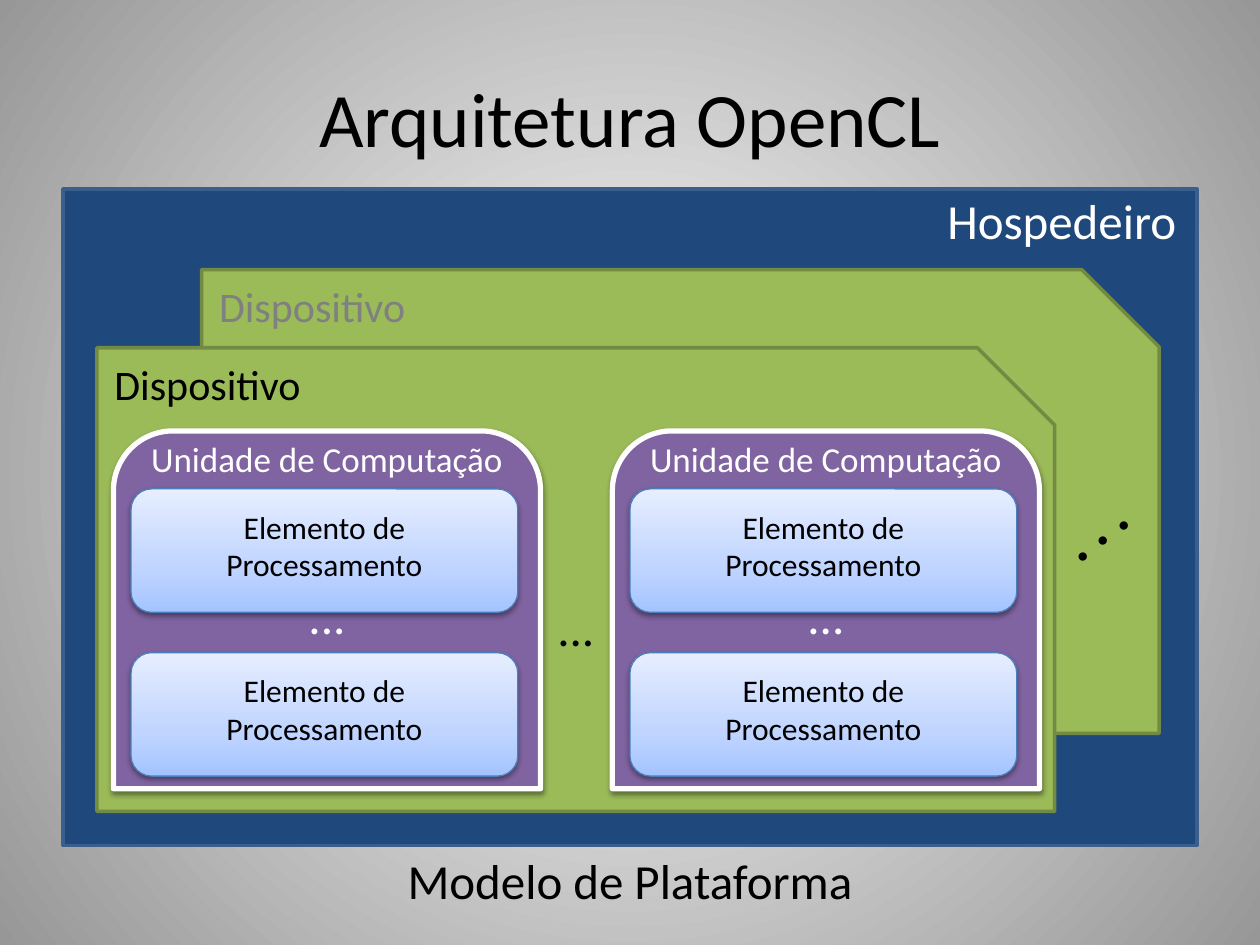
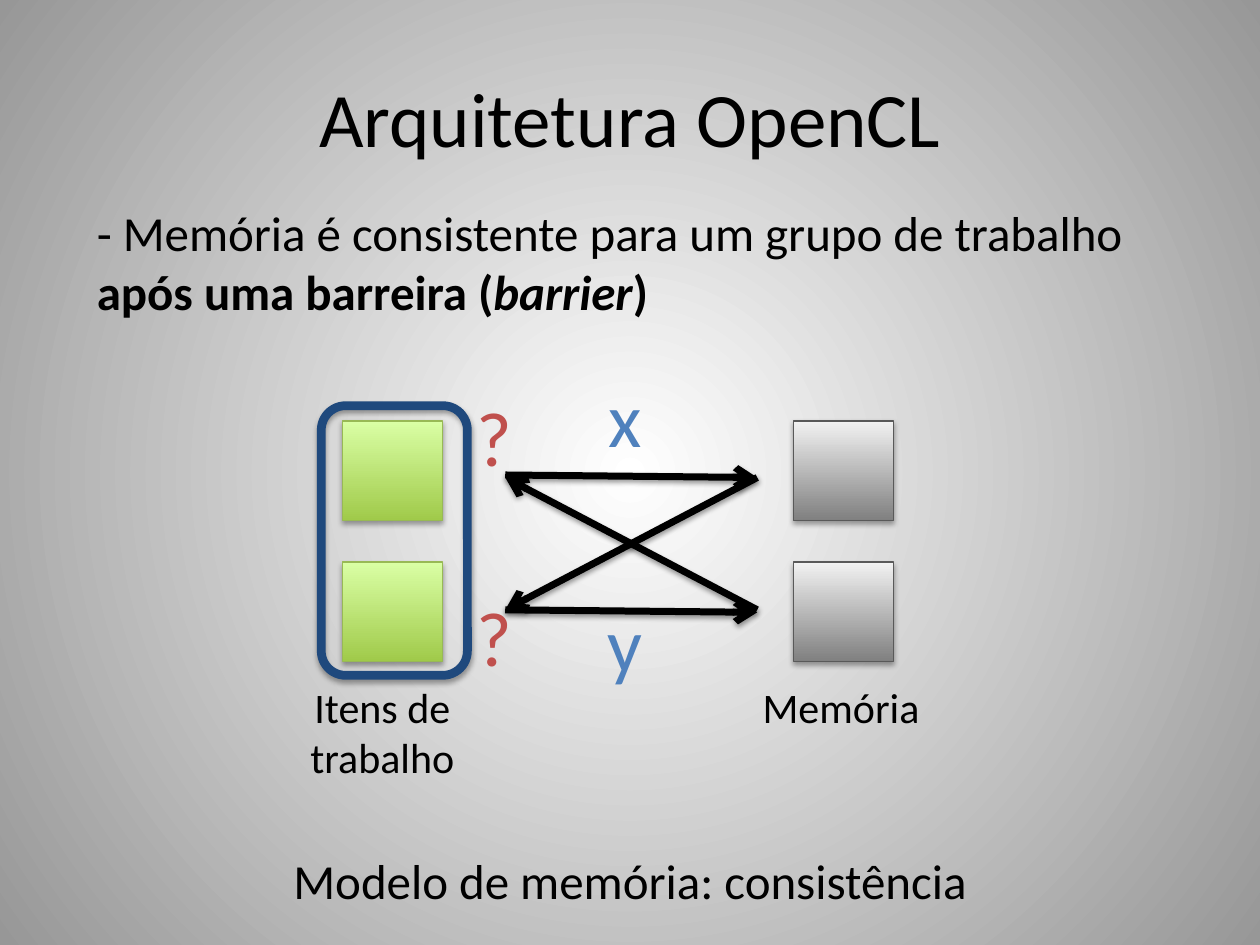
from dataclasses import dataclass
from typing import Optional

from lxml import etree
from pptx import Presentation
from pptx.dml.color import RGBColor
from pptx.enum import shapes, text
from pptx.oxml import ns
from pptx.util import Inches, Pt

FONT = "Calibri"
COLORS = {
    "black": "000000", "white": "FFFFFF", "faded": "808080",
    "navy": "1F497D", "navy_edge": "3A5F8C",
    "green": "9BBB59", "green_edge": "738A42", "purple": "8064A2",
    "element_edge": "4B7EBC", "item_edge": "98B955", "memory_edge": "595959",
    "blue": "4F81BD", "red": "C0504D",
}
GRADIENTS = {
    "background": ((0, "FFFFFF"), (100, "979797")),
    "element": ((0, "A4C4FF"), (35, "BFD4FF"), (100, "E6EEFF")),
    "item": ((0, "A0CA4A"), (100, "DAFFA5")),
    "memory": ((0, "808080"), (100, "F2F2F2")),
}
UPWARD = '<a:lin ang="16200000" scaled="0"/>'
FROM_CENTRE = ('<a:path path="circle"><a:fillToRect l="50000" t="50000" '
               'r="50000" b="50000"/></a:path>')
KIND = shapes.MSO_SHAPE
CENTER, LEFT = text.PP_ALIGN.CENTER, text.PP_ALIGN.LEFT


@dataclass(frozen=True)
class Style:
    """Look of a shape; fill names a colour or a gradient."""
    kind: int
    fill: Optional[str]
    edge: str
    width: float
    shadow: int = 0


HOST = Style(KIND.RECTANGLE, "navy", "navy_edge", 2)
DEVICE = Style(KIND.SNIP_1_RECTANGLE, "green", "green_edge", 2)
UNIT = Style(KIND.ROUND_2_SAME_RECTANGLE, "purple", "white", 3, 38)
ELEMENT = Style(KIND.ROUNDED_RECTANGLE, "element", "element_edge", 0.75, 38)
ITEM = Style(KIND.RECTANGLE, "item", "item_edge", 0.75, 35)
MEMORY = Style(KIND.RECTANGLE, "memory", "memory_edge", 0.75, 35)
WORK_GROUP = Style(KIND.ROUNDED_RECTANGLE, None, "navy", 5, 35)


def color(name: str) -> RGBColor:
    return RGBColor.from_string(COLORS[name])


def drawing_xml(markup: str):
    """Parse DrawingML whose root tag uses the a: prefix."""
    tag, rest = markup.split(" ", 1)
    return etree.fromstring(f'{tag} {ns.nsdecls("a")} {rest}')


def apply_gradient(fill, properties, name: str, direction: str) -> None:
    """Swap the solid fill in a properties element for a gradient."""
    fill.solid()
    stops = "".join(f'<a:gs pos="{position * 1000}"><a:srgbClr val="{value}"/></a:gs>'
                    for position, value in GRADIENTS[name])
    solid = properties.find(ns.qn("a:solidFill"))
    properties.replace(solid, drawing_xml(
        f'<a:gradFill rotWithShape="1"><a:gsLst>{stops}</a:gsLst>{direction}</a:gradFill>'))


def add_shadow(properties, opacity: int, distance: float) -> None:
    effects = properties.find(ns.qn("a:effectLst"))
    if effects is None:
        effects = etree.SubElement(properties, ns.qn("a:effectLst"))
    effects.append(drawing_xml(
        f'<a:outerShdw blurRad="{int(Pt(3.1))}" dist="{int(Pt(distance))}" dir="5400000" '
        f'rotWithShape="0"><a:srgbClr val="{COLORS["black"]}">'
        f'<a:alpha val="{opacity * 1000}"/></a:srgbClr></a:outerShdw>'))


def add_block(slide, style: Style, left: float, top: float, width: float, height: float):
    shape = slide.shapes.add_shape(style.kind, Inches(left), Inches(top),
                                   Inches(width), Inches(height))
    shape.shadow.inherit = False
    properties = shape.element.spPr
    if style.fill is None:
        shape.fill.background()
    elif style.fill in GRADIENTS:
        apply_gradient(shape.fill, properties, style.fill, UPWARD)
    else:
        shape.fill.solid()
        shape.fill.fore_color.rgb = color(style.fill)
    shape.line.color.rgb = color(style.edge)
    shape.line.width = Pt(style.width)
    if style.shadow:
        add_shadow(properties, style.shadow, 1.6 if style.shadow == 38 else 1.8)
    return shape


def format_text(frame, size: int, ink: str, align=CENTER) -> None:
    for paragraph in frame.paragraphs:
        paragraph.alignment = align
        for run in paragraph.runs:
            run.font.name = FONT
            run.font.size = Pt(size)
            run.font.color.rgb = color(ink)


def add_label(slide, words: str, left: float, top: float, width: float, height: float,
              size: int, ink: str = "black", align=CENTER):
    box = slide.shapes.add_textbox(Inches(left), Inches(top), Inches(width), Inches(height))
    frame = box.text_frame
    frame.word_wrap = True
    frame.auto_size = text.MSO_AUTO_SIZE.SHAPE_TO_FIT_TEXT
    frame.text = words
    format_text(frame, size, ink, align)
    return box


def add_arrow(slide, start: tuple[float, float], end: tuple[float, float]) -> None:
    arrow = slide.shapes.add_connector(shapes.MSO_CONNECTOR.STRAIGHT,
                                       *(Inches(value) for value in start + end))
    arrow.line.color.rgb = color("black")
    arrow.line.width = Pt(4)
    properties = arrow.element.spPr
    properties.find(ns.qn("a:ln")).append(drawing_xml('<a:tailEnd type="arrow"/>'))
    add_shadow(properties, 38, 1.6)


def add_titled_slide(presentation, caption: str):
    """Add a slide with the common title and a caption at its foot."""
    slide = presentation.slides.add_slide(presentation.slide_layouts[5])
    title = slide.shapes.title
    title.left, title.top = Inches(0.5), Inches(0.3)
    title.width, title.height = Inches(9), Inches(1.25)
    title.text_frame.text = "Arquitetura OpenCL"
    title.text_frame.vertical_anchor = text.MSO_ANCHOR.MIDDLE
    format_text(title.text_frame, 44, "black")
    add_label(slide, caption, 0.5, 6.7, 9, 0.57, 28)
    return slide


def add_device(slide, left: float, top: float, ink: str) -> None:
    add_block(slide, DEVICE, left, top, 7.6, 3.68)
    add_label(slide, "Dispositivo", left + 0.04, top + 0.04, 2.24, 0.5, 24, ink, LEFT)


def add_compute_unit(slide, left: float) -> None:
    top, width = 3.42, 3.39
    add_block(slide, UNIT, left, top, width, 2.84)
    add_label(slide, "Unidade de Computação", left, top, width, 0.44, 20, "white")
    for element_top in (3.88, 5.18):
        add_block(slide, ELEMENT, left + 0.14, element_top, 3.07, 0.98)
        add_label(slide, "Elemento de\nProcessamento", left + 0.14, element_top + 0.1,
                  3.07, 0.71, 18)
    add_label(slide, "...", left, 4.6, width, 0.57, 28, "white")


def build_platform_slide(presentation) -> None:
    slide = add_titled_slide(presentation, "Modelo de Plataforma")
    add_block(slide, HOST, 0.5, 1.5, 9, 5.21)
    add_label(slide, "Hospedeiro", 7.42, 1.46, 2.2, 0.57, 28, "white", LEFT)
    add_device(slide, 1.6, 2.14, "faded")
    add_device(slide, 0.77, 2.76, "black")
    more_devices = add_label(slide, "...", 8.28, 3.77, 1.02, 0.64, 32, align=LEFT)
    more_devices.rotation = 322.9
    font = more_devices.text_frame.paragraphs[0].runs[0].font
    font.bold = True
    font._element.set("spc", "600")
    for left in (0.9, 4.86):
        add_compute_unit(slide, left)
    add_label(slide, "...", 4.28, 4.69, 0.58, 0.57, 28)


def build_memory_slide(presentation) -> None:
    slide = add_titled_slide(presentation, "Modelo de memória: consistência")
    statement = add_label(slide, "- Memória é consistente para um grupo de trabalho ",
                          0.67, 1.56, 9, 1.04, 28, align=LEFT)
    paragraph = statement.text_frame.paragraphs[0]
    for words, italic in (("após uma barreira (", False), ("barrier", True), (")", False)):
        run = paragraph.add_run()
        run.text = words
        run.font.bold, run.font.italic = True, italic
    format_text(statement.text_frame, 28, "black", LEFT)

    for top in (3.34, 4.46):
        add_block(slide, ITEM, 2.72, top, 0.79, 0.79)
        add_block(slide, MEMORY, 6.3, top, 0.79, 0.79)
    add_block(slide, WORK_GROUP, 2.55, 3.22, 1.16, 2.14)
    add_label(slide, "Itens de trabalho", 2.05, 5.36, 1.97, 0.91, 24)
    add_label(slide, "Memória", 5.69, 5.36, 1.97, 0.5, 24)

    near, far, upper, lower = 4.01, 6.01, 3.79, 4.84
    add_arrow(slide, (near, 3.77), (far, upper))
    add_arrow(slide, (near, lower), (far, 4.86))
    add_arrow(slide, (far, lower), (near, upper))
    add_arrow(slide, (far, upper), (near, lower))
    for variable, top in (("x", 2.89), ("y", 4.67)):
        label = add_label(slide, variable, 4.71, top, 0.5, 0.84, 44, "blue")
        label.text_frame.vertical_anchor = text.MSO_ANCHOR.MIDDLE
    for top in (3.04, 4.63):
        add_label(slide, "?", 3.61, top, 0.63, 0.84, 44, "red")


def main() -> None:
    presentation = Presentation()
    presentation.slide_width, presentation.slide_height = Inches(10), Inches(7.5)
    master = presentation.slide_master
    fill = master.background.fill
    fill.solid()
    apply_gradient(fill, master.element.find(".//" + ns.qn("p:bgPr")),
                   "background", FROM_CENTRE)
    build_platform_slide(presentation)
    build_memory_slide(presentation)
    presentation.save("out.pptx")


if __name__ == "__main__":
    main()
